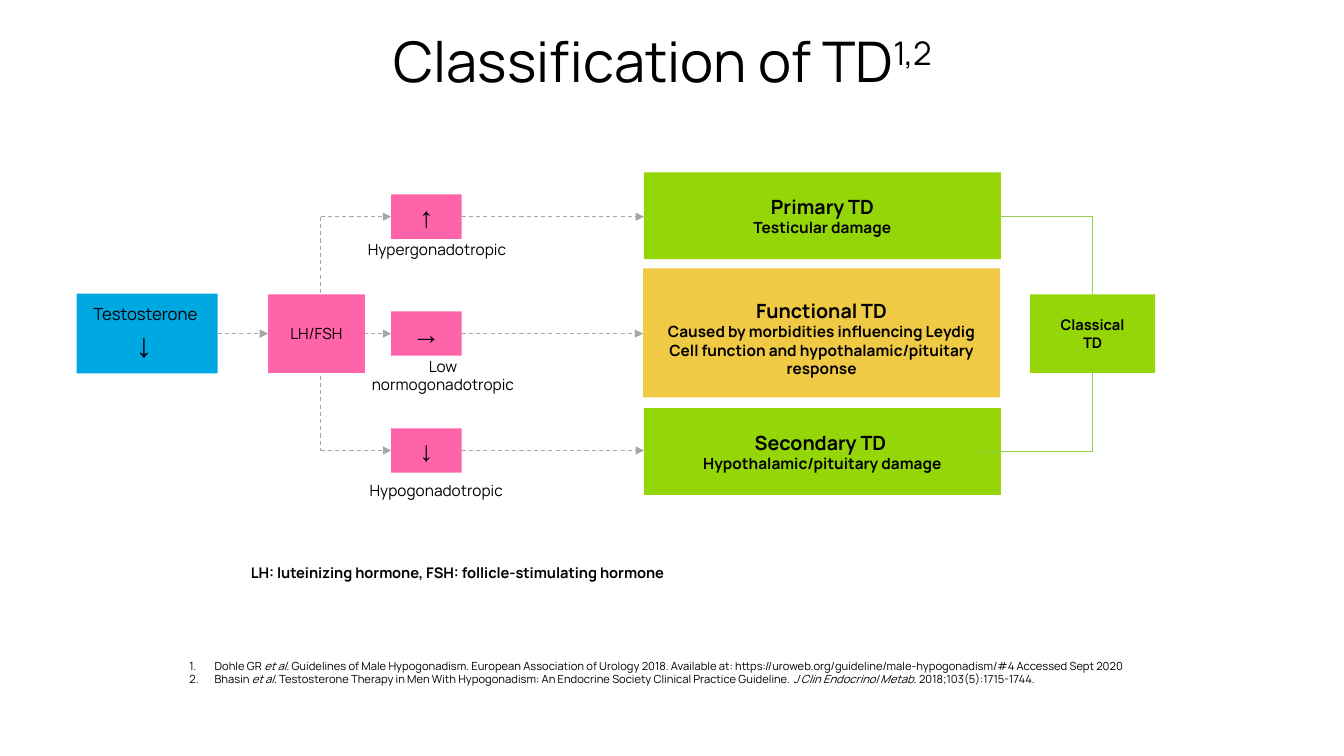
from lxml.etree import SubElement
from pptx import Presentation
from pptx.dml.color import RGBColor
from pptx.enum.dml import MSO_LINE
from pptx.enum.shapes import MSO_CONNECTOR, MSO_SHAPE
from pptx.enum.text import MSO_ANCHOR, PP_ALIGN
from pptx.oxml.ns import qn
from pptx.util import Pt

THEME = {
    "font": "Manrope", "symbol": "Arial", "ink": "000000",
    "blue": "00A8E1", "pink": "FF64AA", "green": "95D608", "gold": "F0C945",
    "flow": "A6A6A6", "bracket": "92D050",
    "title": 40, "type": 14, "label": 12, "body": 11, "note": 10.5, "source": 8,
    "big arrow": 24, "arrow": 20, "arrow gap": 16,
}

# Content: each paragraph is a list of runs (text, size name, styles)
TITLE = [[("Classification of TD", "title", ""), ("1,2", "title", "super")]]
TESTOSTERONE = [[("Testosterone ", "label", "")],
                [("↓", "big arrow", "symbol"), (" ", "arrow gap", "symbol")]]
HORMONES = [[("LH/FSH", "body", "")]]
CLASSICAL = [[("Classical", "note", "bold")], [("TD", "note", "bold")]]
ABBREVIATIONS = [[("LH: luteinizing hormone, FSH: follicle-stimulating hormone", "note", "bold")]]

# Hormone level: arrow, label, label box, label wraps
LEVELS = [
    ("↑", "Hypergonadotropic", (255.6, 167.8, 121.7, 20.9), False),
    ("→", "Low normogonadotropic", (251.3, 251.3, 130.3, 33.8), True),
    ("↓", "Hypogonadotropic", (257, 339.8, 118.1, 20.9), False),
]
# Type of deficiency: name, cause, fill, left, top, height, top inset
TYPES = [
    ("Primary TD", "Testicular damage", "green", 460, 123.1, 62, 3.6),
    ("Functional TD", "Caused by morbidities influencing Leydig Cell function and "
     "hypothalamic/pituitary response", "gold", 459.4, 191.7, 92.2, 11),
    ("Secondary TD ", "Hypothalamic/pituitary damage", "green", 460, 291.5, 62, 3.6),
]
REFERENCES = [
    [("Dohle GR ", "source", ""), ("et al. ", "source", "italic"),
     ("Guidelines of Male Hypogonadism. European Association of Urology 2018. Available at: "
      "https://uroweb.org/guideline/male-hypogonadism/#4 Accessed Sept 2020", "source", "")],
    [("Bhasin ", "source", ""), ("et al.", "source", "italic"),
     (" Testosterone Therapy in Men With Hypogonadism: An Endocrine Society Clinical "
      "Practice Guideline. ", "source", ""),
     ("J Clin Endocrinol Metab.", "source", "italic"),
     (" 2018;103(5):1715-1744.", "source", "")],
]

# Geometry in points
ROWS = [154.8 + 83.5 * i for i in range(3)]
MIDDLE = ROWS[1]
START = (54.7, 209.8, 100.8, 56.9)
HUB = (191.5, 210.2, 69.1, 56.2)
CLASS_BOX = (735.8, 210.2, 89.3, 56.2)
LEVEL_LEFT, LEVEL_WIDTH, LEVEL_HEIGHT = 279.4, 50.4, 31.7
TYPE_WIDTH = 255
HUB_X = 229
BRACKET_X = 780.5

deck = Presentation()
deck.slide_width, deck.slide_height = Pt(960), Pt(540)
page = deck.slides.add_slide(deck.slide_layouts[6])


def color(name):
    return RGBColor.from_string(THEME[name])


def write(box, paragraphs, align=PP_ALIGN.CENTER, anchor=MSO_ANCHOR.MIDDLE,
          wrap=True, numbered=False, spacing=None, top=3.6):
    frame = box.text_frame
    frame.word_wrap = wrap
    frame.vertical_anchor = anchor
    frame.margin_top = Pt(top)
    for i, runs in enumerate(paragraphs):
        para = frame.paragraphs[0] if i == 0 else frame.add_paragraph()
        if numbered:
            properties = para._p.get_or_add_pPr()
            properties.set("marL", str(Pt(18)))
            properties.set("indent", str(-Pt(18)))
            SubElement(properties, qn("a:buFont"), typeface="+mj-lt")
            SubElement(properties, qn("a:buAutoNum"), type="arabicPeriod")
        para.alignment = align
        if spacing:
            para.line_spacing = spacing
        for text, size, style in runs:
            span = para.add_run()
            span.text = text
            font = span.font
            font.name = THEME["symbol" if style == "symbol" else "font"]
            font.size = Pt(THEME[size])
            font.color.rgb = color("ink")
            font.bold = style == "bold"
            font.italic = style == "italic"
            if style == "super":
                span._r.get_or_add_rPr().set("baseline", "30000")


def add_block(bounds, fill, paragraphs, **options):
    box = page.shapes.add_shape(MSO_SHAPE.RECTANGLE, *map(Pt, bounds))
    box.shadow.inherit = False
    box.fill.solid()
    box.fill.fore_color.rgb = color(fill)
    box.line.fill.background()
    write(box, paragraphs, **options)


def add_text(bounds, paragraphs, **options):
    write(page.shapes.add_textbox(*map(Pt, bounds)), paragraphs, **options)


def add_line(x1, y1, x2, y2, name="flow", arrow=True):
    line = page.shapes.add_connector(MSO_CONNECTOR.STRAIGHT, *map(Pt, (x1, y1, x2, y2)))
    line.line.color.rgb = color(name)
    line.line.width = Pt(0.75 if name == "flow" else 1)
    if name == "flow":
        line.line.dash_style = MSO_LINE.DASH
    if arrow:
        SubElement(line.line._get_or_add_ln(), qn("a:tailEnd"), type="triangle")
    SubElement(line._element.spPr, qn("a:effectLst"))


# Title
add_text((54.7, 10.8, 837.4, 69.8), TITLE, spacing=0.9)

# Types of deficiency
for name, cause, fill, left, top, height, inset in TYPES:
    add_block((left, top, TYPE_WIDTH, height), fill,
              [[(name, "type", "bold")], [(cause, "body", "bold")]], top=inset)

# Bracket from primary and secondary to classical
for left, y in ((712.8, ROWS[0]), (698.4, ROWS[2] + 0.8)):
    add_line(left, y, BRACKET_X, y, "bracket", arrow=False)
add_line(BRACKET_X, ROWS[2] + 0.8, BRACKET_X, ROWS[0], "bracket", arrow=False)
add_block(CLASS_BOX, "green", CLASSICAL)

# Start of the flow
add_block(START, "blue", TESTOSTERONE)
add_line(START[0] + START[2], MIDDLE, HUB[0], MIDDLE)
add_line(HUB_X, ROWS[0], HUB_X, ROWS[2], arrow=False)

# Hormone levels with their arrows
for y, (symbol, label, bounds, wrap), kind in zip(ROWS, LEVELS, TYPES):
    add_block((LEVEL_LEFT, y - LEVEL_HEIGHT / 2, LEVEL_WIDTH, LEVEL_HEIGHT), "pink",
              [[(symbol, "arrow", "symbol")]])
    add_line(HUB_X, y, LEVEL_LEFT, y)
    add_line(LEVEL_LEFT + LEVEL_WIDTH, y, kind[3], y)
    add_text(bounds, [[(label, "body", "")]], anchor=MSO_ANCHOR.TOP, wrap=wrap,
             align=PP_ALIGN.CENTER if wrap else PP_ALIGN.LEFT)
add_block(HUB, "pink", HORMONES)

# Abbreviations and references
add_text((172.1, 398.9, 315.4, 20.2), ABBREVIATIONS, align=PP_ALIGN.LEFT,
         anchor=MSO_ANCHOR.TOP, wrap=False)
add_text((128.2, 467.3, 788.4, 26.6), REFERENCES, align=PP_ALIGN.LEFT,
         anchor=MSO_ANCHOR.TOP, numbered=True)

deck.save("out.pptx")
